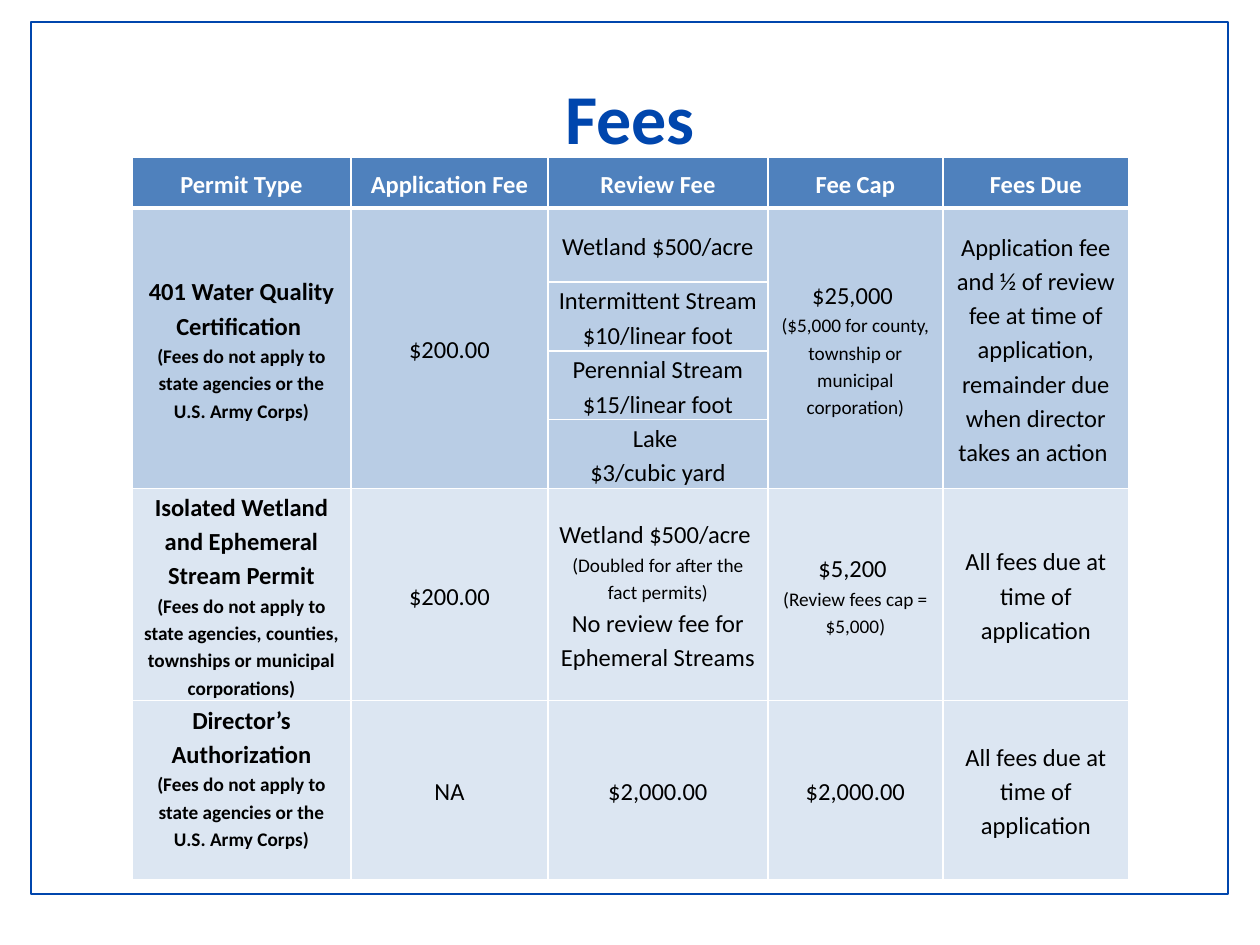
from dataclasses import dataclass

from lxml.etree import SubElement
from pptx import Presentation
from pptx.dml.color import RGBColor
from pptx.enum.shapes import MSO_SHAPE
from pptx.enum.text import MSO_ANCHOR, PP_ALIGN
from pptx.oxml.ns import qn
from pptx.util import Pt


@dataclass(frozen=True)
class Theme:
    font: str = "Calibri"
    blue: str = "0046AD"
    header: str = "4F81BD"
    band_dark: str = "B9CDE5"
    band_light: str = "DCE6F2"
    white: str = "FFFFFF"
    black: str = "000000"
    title_size: int = 40
    body_size: int = 14
    note_size: int = 11


theme = Theme()
SCALE = 914400 / 126


def px(length):
    return round(length * SCALE)


def style(paragraph, size, color, bold):
    paragraph.alignment = PP_ALIGN.CENTER
    for run in paragraph.runs:
        run.font.name = theme.font
        run.font.size = Pt(size)
        run.font.bold = bold
        run.font.color.rgb = RGBColor.from_string(color)


presentation = Presentation()
presentation.slide_width = px(1260)
presentation.slide_height = px(945)
slide = presentation.slides.add_slide(presentation.slide_layouts[5])

frame = slide.shapes.add_shape(MSO_SHAPE.RECTANGLE, px(31), px(22), px(1197), px(872))
frame.shadow.inherit = False
frame.fill.background()
frame.line.color.rgb = RGBColor.from_string(theme.blue)
frame.line.width = Pt(1)

title = slide.shapes.title
title.left, title.top, title.width, title.height = px(63), px(38), px(1134), px(157)
title.text_frame.text = "Fees"
title.text_frame.vertical_anchor = MSO_ANCHOR.MIDDLE
style(title.text_frame.paragraphs[0], theme.title_size, theme.blue, True)

STATE_NOTE = "(Fees do not apply to state agencies or the U.S. Army Corps)"
ALL_DUE = "All fees due at time of application"
rows = [
    ["Permit Type", "Application Fee", "Review Fee", "Fee Cap", "Fees Due"],
    [
        "401 Water Quality Certification \n" + STATE_NOTE,
        "$200.00",
        "Wetland $500/acre",
        "$25,000 \n($5,000 for county, township or municipal corporation)",
        "Application fee and ½ of review fee at time of application, "
        "remainder due when director takes an action ",
    ],
    ["", "", "Intermittent Stream $10/linear foot", "", ""],
    ["", "", "Perennial Stream $15/linear foot", "", ""],
    ["", "", "Lake \n$3/cubic yard", "", ""],
    [
        "Isolated Wetland and Ephemeral Stream Permit\n"
        "(Fees do not apply to state agencies, counties, townships or municipal corporations)",
        "$200.00",
        "Wetland $500/acre \n(Doubled for after the fact permits)\n"
        "No review fee for Ephemeral Streams",
        "$5,200 \n(Review fees cap = $5,000)",
        ALL_DUE,
    ],
    ["Director’s Authorization\n" + STATE_NOTE, "NA", "$2,000.00", "$2,000.00", ALL_DUE],
]
column_widths = [219, 197, 220, 175, 186]
row_heights = [51, 74, 69, 68, 69, 212, 179]
row_fills = [theme.header] + [theme.band_dark] * 4 + [theme.band_light] * 2

table = slide.shapes.add_table(
    len(rows), len(column_widths), px(132), px(157),
    px(sum(column_widths)), px(sum(row_heights)),
).table
table.horz_banding = False
for column, width in zip(table.columns, column_widths):
    column.width = px(width)
for row, height in zip(table.rows, row_heights):
    row.height = px(height)

for row_index, texts in enumerate(rows):
    is_header = row_index == 0
    for column_index, text in enumerate(texts):
        cell = table.cell(row_index, column_index)
        cell.vertical_anchor = MSO_ANCHOR.MIDDLE
        cell.margin_left = cell.margin_right = px(10)
        cell.margin_top = cell.margin_bottom = 0

        properties = cell._tc.get_or_add_tcPr()
        for side in ("lnL", "lnR", "lnT", "lnB"):
            thick = (is_header and side == "lnB") or (row_index == 1 and side == "lnT")
            border = SubElement(properties, qn(f"a:{side}"), w=str(Pt(3 if thick else 1)))
            border_fill = SubElement(border, qn("a:solidFill"))
            SubElement(border_fill, qn("a:srgbClr"), val=theme.white)
        cell.fill.solid()
        cell.fill.fore_color.rgb = RGBColor.from_string(row_fills[row_index])

        cell.text_frame.text = text
        for paragraph in cell.text_frame.paragraphs:
            paragraph.line_spacing = 1.15
            size = theme.note_size if paragraph.text.startswith("(") else theme.body_size
            color = theme.white if is_header else theme.black
            style(paragraph, size, color, is_header or column_index == 0)

table.cell(6, 0).margin_bottom = px(27)
for column_index in (0, 1, 3, 4):
    table.cell(1, column_index).merge(table.cell(4, column_index))

presentation.save("out.pptx")
